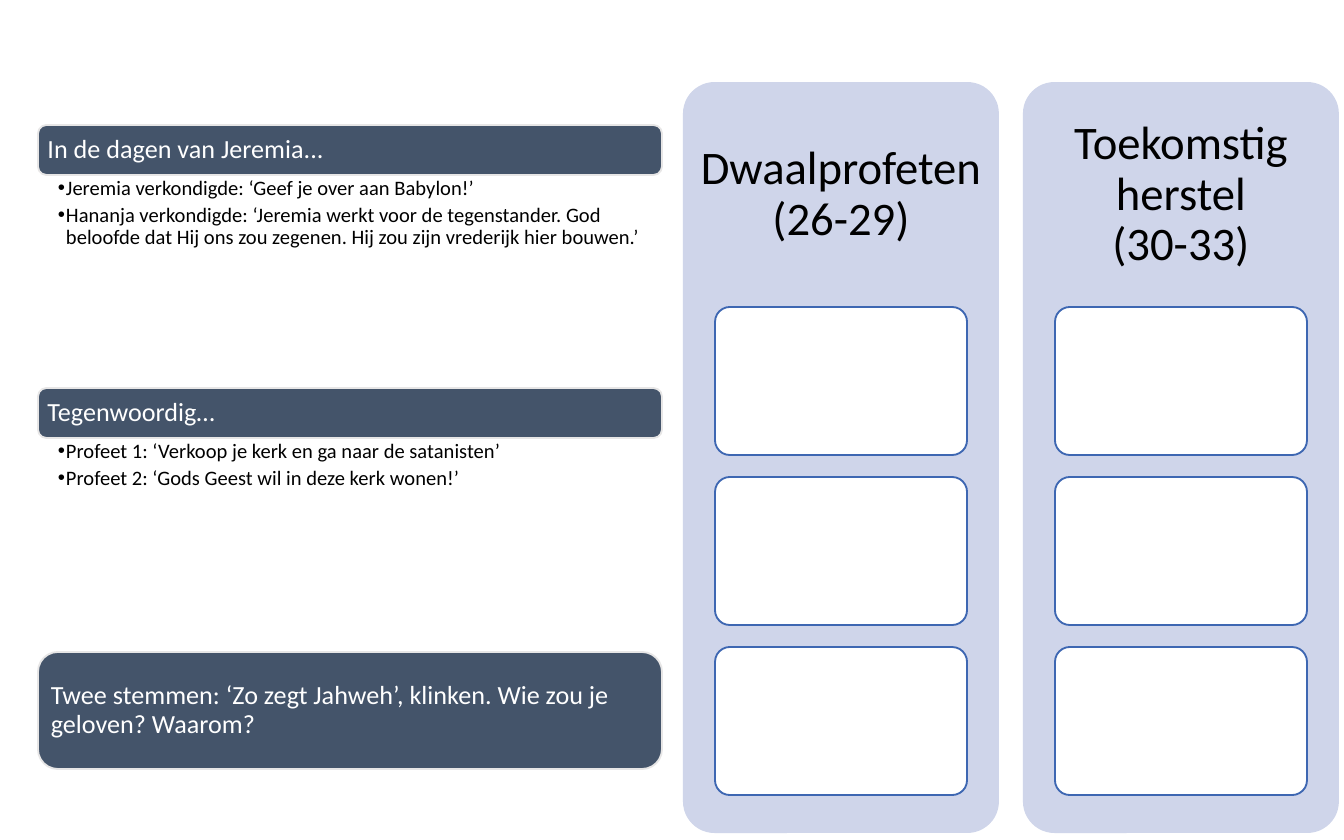
"""Build the slide on true and false prophets in Jeremiah."""
from dataclasses import dataclass
from typing import Optional

from lxml.etree import SubElement
from pptx import Presentation
from pptx.dml.color import RGBColor
from pptx.enum.shapes import MSO_SHAPE
from pptx.enum.text import MSO_ANCHOR, MSO_AUTO_SIZE, PP_ALIGN
from pptx.oxml.ns import qn
from pptx.util import Pt

PX = 914400 / 134.4
BLACK = RGBColor(0x00, 0x00, 0x00)
WHITE = RGBColor(0xFF, 0xFF, 0xFF)
LAVENDER = RGBColor(0xCF, 0xD5, 0xEA)
BLUE = RGBColor(0x3E, 0x67, 0xB2)
SLATE = RGBColor(0x44, 0x54, 0x6A)
PALE = RGBColor(0xE7, 0xE6, 0xE6)

BAR_LEFT, BAR_WIDTH, BAR_HEIGHT = 38, 624, 50
LIST_HEIGHT = 212
COLUMN_TOP, COLUMN_WIDTH, COLUMN_HEIGHT = 82, 316, 751
COLUMN_HEAD = 226
CARD_COUNT, CARD_WIDTH, CARD_HEIGHT, CARD_TOP, CARD_PITCH = 3, 252, 148, 307, 170


@dataclass(frozen=True)
class Box:
    left: int
    top: int
    width: int
    height: int


@dataclass(frozen=True)
class Style:
    fill: RGBColor
    line: Optional[RGBColor] = None
    corner: float = 0.1


@dataclass(frozen=True)
class Section:
    heading: str
    top: int
    points: tuple[str, ...]


@dataclass(frozen=True)
class Column:
    title: str
    left: int


COLUMN_STYLE = Style(LAVENDER)
CARD_STYLE = Style(WHITE, BLUE)
BAR_STYLE = Style(SLATE, PALE, 0.17)

SECTIONS = (
    Section("In de dagen van Jeremia...", 125, (
        "Jeremia verkondigde: ‘Geef je over aan Babylon!’",
        "Hananja verkondigde: ‘Jeremia werkt voor de tegenstander. God beloofde "
        "dat Hij ons zou zegenen. Hij zou zijn vrederijk hier bouwen.’")),
    Section("Tegenwoordig…", 388, (
        "Profeet 1: ‘Verkoop je kerk en ga naar de satanisten’",
        "Profeet 2: ‘Gods Geest wil in deze kerk wonen!’")),
)
QUESTION = "Twee stemmen: ‘Zo zegt Jahweh’, klinken. Wie zou je geloven? Waarom?"
COLUMNS = (Column("Dwaalprofeten (26-29)", 683),
           Column("Toekomstig herstel\v(30-33)", 1023))


def px(length: int) -> int:
    """Turn px into EMU."""
    return round(length * PX)


def apply(target, values: dict) -> None:
    """Set every named attribute on the target."""
    for name, value in values.items():
        setattr(target, name, value)


def set_margins(frame, left: int, top: int, right: int, bottom: int) -> None:
    """Set the insets of a text frame in px."""
    apply(frame, {"margin_left": px(left), "margin_top": px(top),
                  "margin_right": px(right), "margin_bottom": px(bottom)})


def format_paragraph(paragraph, size: int, color: RGBColor, align=PP_ALIGN.LEFT) -> None:
    """Give a paragraph its spacing, alignment and font."""
    apply(paragraph, {"alignment": align, "line_spacing": 0.9,
                      "space_before": Pt(0), "space_after": Pt(size * 0.2)})
    apply(paragraph.font, {"name": "Calibri", "size": Pt(size)})
    for run in paragraph.runs:
        apply(run.font, {"name": "Calibri", "size": Pt(size)})
        run.font.color.rgb = color


def add_panel(slide, box: Box, style: Style):
    """Draw a rounded rectangle."""
    panel = slide.shapes.add_shape(MSO_SHAPE.ROUNDED_RECTANGLE, px(box.left),
                                   px(box.top), px(box.width), px(box.height))
    panel.adjustments[0] = style.corner
    panel.shadow.inherit = False
    panel.fill.solid()
    panel.fill.fore_color.rgb = style.fill
    if style.line is None:
        panel.line.fill.background()
    else:
        panel.line.color.rgb = style.line
        panel.line.width = Pt(1)
    return panel


def add_bar(slide, text: str, box: Box) -> None:
    """Draw a dark bar with white text."""
    frame = add_panel(slide, box, BAR_STYLE).text_frame
    apply(frame, {"text": text, "word_wrap": True, "vertical_anchor": MSO_ANCHOR.MIDDLE})
    set_margins(frame, 7, 7, 7, 7)
    format_paragraph(frame.paragraphs[0], 14, WHITE)


def fill_list(body, points: tuple[str, ...], box: Box) -> None:
    """Place a body placeholder and fill it with bulleted points."""
    apply(body, {"left": px(box.left), "top": px(box.top),
                 "width": px(box.width), "height": px(box.height)})
    frame = body.text_frame
    apply(frame, {"text": "\n".join(points), "word_wrap": True,
                  "auto_size": MSO_AUTO_SIZE.NONE, "vertical_anchor": MSO_ANCHOR.TOP})
    set_margins(frame, 20, 3, 15, 3)
    for paragraph in frame.paragraphs:
        paragraph.level = 1
        format_paragraph(paragraph, 11, BLACK)
        properties = paragraph._p.get_or_add_pPr()
        properties.set("marL", str(px(8)))
        properties.set("indent", str(-px(8)))
        SubElement(properties, qn("a:buChar")).set("char", "•")


def add_column(slide, column: Column) -> None:
    """Draw a titled column with its empty cards."""
    box = Box(column.left, COLUMN_TOP, COLUMN_WIDTH, COLUMN_HEIGHT)
    frame = add_panel(slide, box, COLUMN_STYLE).text_frame
    apply(frame, {"text": column.title, "word_wrap": True,
                  "vertical_anchor": MSO_ANCHOR.MIDDLE})
    set_margins(frame, 4, 4, 4, COLUMN_HEIGHT - COLUMN_HEAD + 4)
    format_paragraph(frame.paragraphs[0], 25, BLACK, PP_ALIGN.CENTER)
    card_left = column.left + (COLUMN_WIDTH - CARD_WIDTH) // 2
    for row in range(CARD_COUNT):
        card = Box(card_left, CARD_TOP + row * CARD_PITCH, CARD_WIDTH, CARD_HEIGHT)
        add_panel(slide, card, CARD_STYLE)


def main() -> None:
    """Build and save the slide."""
    deck = Presentation()
    apply(deck, {"slide_width": px(1344), "slide_height": px(840)})
    slide = deck.slides.add_slide(deck.slide_layouts.get_by_name("Two Content"))
    title, *bodies = slide.placeholders
    title.element.getparent().remove(title.element)
    for column in COLUMNS:
        add_column(slide, column)
    for section, body in zip(SECTIONS, bodies):
        add_bar(slide, section.heading, Box(BAR_LEFT, section.top, BAR_WIDTH, BAR_HEIGHT))
        fill_list(body, section.points,
                  Box(BAR_LEFT, section.top + BAR_HEIGHT, BAR_WIDTH, LIST_HEIGHT))
    add_bar(slide, QUESTION, Box(BAR_LEFT, 652, BAR_WIDTH, 117))
    deck.save("out.pptx")


if __name__ == "__main__":
    main()
